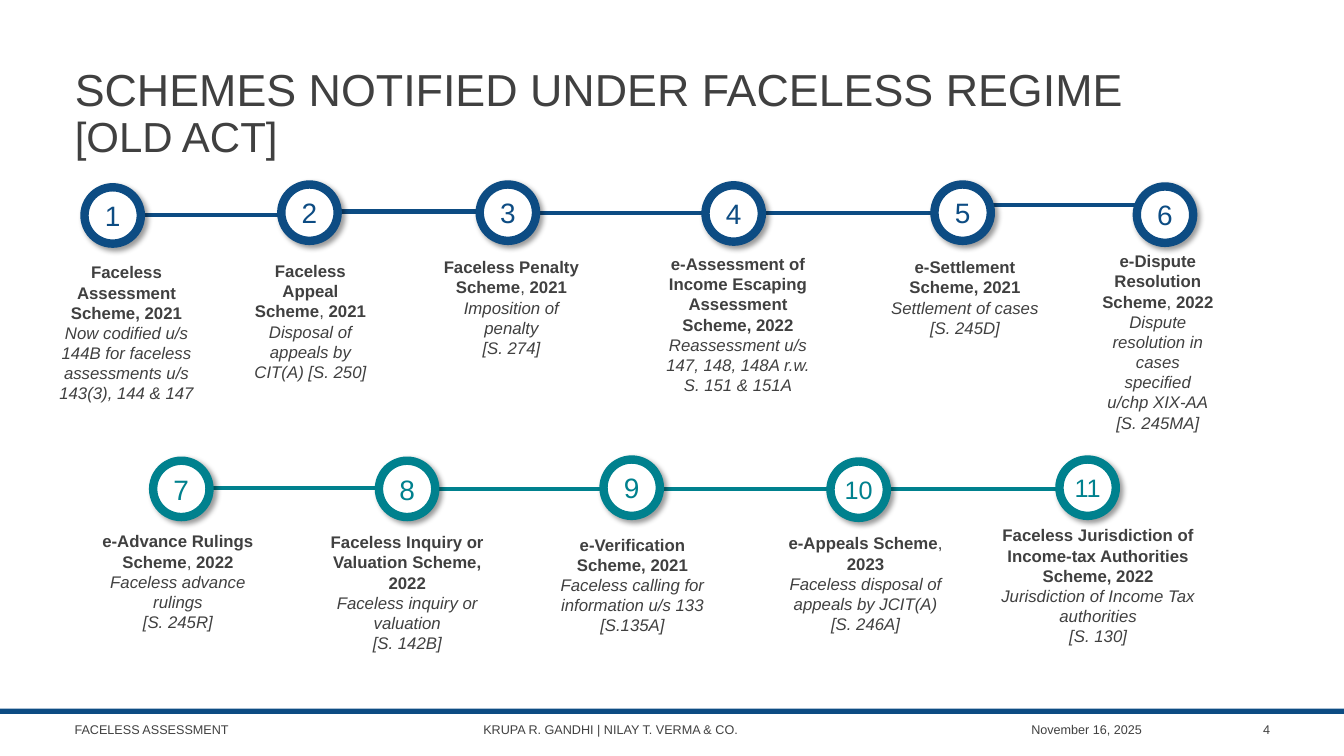
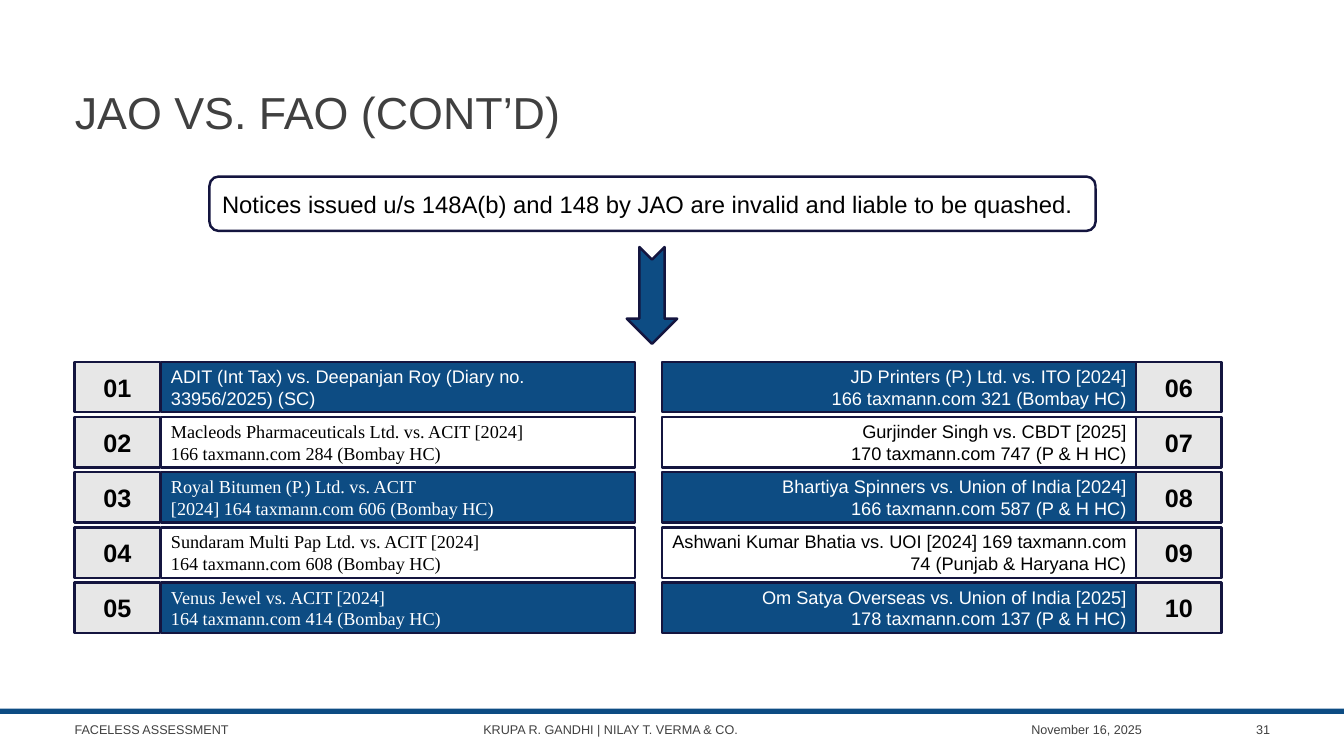
from dataclasses import dataclass
from itertools import pairwise

from lxml import etree
from pptx import Presentation
from pptx import util as u
from pptx.dml import color
from pptx.enum import shapes, text
from pptx.oxml import ns


@dataclass(frozen=True)
class Theme:
    font: str = "Arial"
    serif: str = "Times New Roman"
    blue: str = "0D4C83"
    teal: str = "00818E"
    navy: str = "14153F"
    ink: str = "404040"
    black: str = "000000"
    white: str = "FFFFFF"
    grey: str = "E7E7E7"
    title: int = 32
    title_suffix: int = 30
    number: int = 20
    small_number: int = 18
    notice: int = 17
    case: int = 13
    body: int = 12
    footer: int = 9


THEME = Theme()
LEFT, CENTER, RIGHT = text.PP_ALIGN.LEFT, text.PP_ALIGN.CENTER, text.PP_ALIGN.RIGHT
SLIDE_WIDTH, SLIDE_HEIGHT = 33.87, 19.05
CIRCLE = 1.42


def rgb(value):
    return color.RGBColor.from_string(value)


def assign(target, values):
    for name, value in values.items():
        setattr(target, name, value)


class Deck:
    """Hold the presentation, its style and the current slide."""

    def __init__(self, theme):
        self.theme = theme
        self.presentation = Presentation()
        assign(self.presentation, {"slide_width": u.Cm(SLIDE_WIDTH),
                                   "slide_height": u.Cm(SLIDE_HEIGHT)})
        self.slide = None

    def add_slide(self, title_runs, number, title_width):
        layout = self.presentation.slide_layouts[5]
        self.slide = self.presentation.slides.add_slide(layout)
        title = self.slide.shapes.title
        box = (1.63, 1.52, title_width, 2.74)
        assign(title, dict(zip(("left", "top", "width", "height"), map(u.Cm, box))))
        self.fill_text(title, [title_runs], size=self.theme.title, spacing=0.9)
        self.footer(number)

    def footer(self, number):
        self.shape("RECTANGLE", (0, 17.86, SLIDE_WIDTH, 0.13), self.theme.blue)
        for label, left, width, align in (
            ("FACELESS ASSESSMENT", 1.63, 8, LEFT),
            ("KRUPA R. GANDHI | NILAY T. VERMA & CO.", 11.93, 8.9, LEFT),
            ("November 16, 2025", 21.13, 7.9, RIGHT),
            (number, 29.34, 2.92, RIGHT),
        ):
            self.text_box((left, 17.86, width, 1.02), [[(label, {})]],
                          size=self.theme.footer, align=align)

    def fill_text(self, shape, lines, size, ink=None, font=None, align=LEFT,
                  anchor="MIDDLE", spacing=None, **frame_values):
        frame = shape.text_frame
        assign(frame, {"word_wrap": True, "auto_size": text.MSO_AUTO_SIZE.NONE,
                       "vertical_anchor": text.MSO_ANCHOR[anchor], **frame_values})
        for index, runs in enumerate(lines):
            paragraph = frame.add_paragraph() if index else frame.paragraphs[0]
            assign(paragraph, {"alignment": align, "line_spacing": spacing})
            for content, style in runs:
                run = paragraph.add_run()
                run.text = content
                assign(run.font, {"name": font or self.theme.font,
                                  "size": u.Pt(size), **style})
                run.font.color.rgb = rgb(ink or self.theme.ink)

    def text_box(self, box, lines, **style):
        self.fill_text(self.slide.shapes.add_textbox(*map(u.Cm, box)), lines, **style)

    def shape(self, kind, box, fill, line=None, weight=1.75):
        shape = self.slide.shapes.add_shape(shapes.MSO_SHAPE[kind], *map(u.Cm, box))
        shape.shadow.inherit = False
        shape.fill.solid()
        shape.fill.fore_color.rgb = rgb(fill)
        if line:
            shape.line.color.rgb = rgb(line)
            shape.line.width = u.Pt(weight)
        else:
            shape.line.fill.background()
        return shape

    def circle(self, left, top, label, tint):
        shape = self.shape("OVAL", (left, top, CIRCLE, CIRCLE), self.theme.white, tint, 6)
        effects = shape.element.spPr.find(ns.qn("a:effectLst"))
        shadow = etree.SubElement(effects, ns.qn("a:outerShdw"), blurRad="50800",
                                  dist="38100", dir="2700000", algn="tl", rotWithShape="0")
        black = etree.SubElement(shadow, ns.qn("a:srgbClr"), val=self.theme.black)
        etree.SubElement(black, ns.qn("a:alpha"), val="40000")
        size = self.theme.number if len(label) == 1 else self.theme.small_number
        self.fill_text(shape, [[(label, {})]], size=size, ink=tint, align=CENTER,
                       word_wrap=False, margin_left=0, margin_right=0)

    def link(self, start, end, height, tint):
        connector = self.slide.shapes.add_connector(
            shapes.MSO_CONNECTOR.STRAIGHT, *map(u.Cm, (start, height, end, height)))
        connector.line.color.rgb = rgb(tint)
        connector.line.width = u.Pt(3)
        etree.SubElement(connector.element.spPr, ns.qn("a:effectLst"))

    def timeline(self, stops, first, tint):
        for stop, following in pairwise(stops):
            self.link(stop["left"] + CIRCLE, following["left"], stop["link"], tint)
        for number, stop in enumerate(stops, first):
            self.circle(stop["left"], stop["top"], str(number), tint)
            heading = [(part, {"bold": index % 2 == 0})
                       for index, part in enumerate(stop["heading"])]
            details = [[(line, {"italic": True})] for line in stop["details"]]
            self.text_box(stop["box"], [heading, *details], size=self.theme.body,
                          align=CENTER, anchor="TOP")

    def case(self, row, number, lines, font, mirrored):
        top = 9.12 + 1.39 * row
        number_left, case_left = (28.63, 16.69) if mirrored else (1.88, 4.06)
        fill, ink = ((self.theme.white, self.theme.black) if row % 2
                     else (self.theme.blue, self.theme.white))
        badge = self.shape("RECTANGLE", (number_left, top, 2.16, 1.27),
                           self.theme.grey, self.theme.navy)
        self.fill_text(badge, [[(f"{number:02}", {"bold": True})]],
                       size=self.theme.small_number, ink=self.theme.black, align=CENTER)
        panel = self.shape("RECTANGLE", (case_left, top, 11.94, 1.27), fill, self.theme.navy)
        self.fill_text(panel, [[(line, {})] for line in lines], size=self.theme.case,
                       ink=ink, font=font, align=RIGHT if mirrored else LEFT)


def stop(left, top, link, box, heading, *details):
    return {"left": left, "top": top, "link": link, "box": box,
            "heading": heading, "details": details}


OLD_SCHEMES = [
    stop(2.13, 4.72, 5.41, (1.07, 6.48, 4.24, 4.45),
         ["Faceless Assessment Scheme, 2021"],
         "Now codified u/s 144B for faceless assessments u/s", "143(3), 144 & 147"),
    stop(7.09, 4.65, 5.33, (6.1, 6.45, 3.45, 3.84),
         ["Faceless Appeal Scheme", ", ", "2021"],
         "Disposal of appeals by CIT(A) [S. 250]"),
    stop(12.09, 4.65, 5.36, (10.77, 6.35, 4.24, 3.33),
         ["Faceless Penalty Scheme", ", ", "2021"],
         "Imposition of penalty", "[S. 274]"),
    stop(17.78, 4.67, 5.36, (16.48, 6.27, 4.24, 3.84),
         ["e-Assessment of Income Escaping Assessment Scheme, 2022"],
         "Reassessment u/s 147, 148, 148A r.w. S. 151 & 151A"),
    stop(23.55, 4.65, 5.17, (22.2, 6.35, 4.24, 2.31),
         ["e-Settlement Scheme, 2021"],
         "Settlement of cases", "[S. 245D]"),
    stop(28.65, 4.7, None, (27.53, 6.2, 3.3, 5.38),
         ["e-Dispute Resolution Scheme", ", ", "2022"],
         "Dispute resolution in cases specified u/chp XIX-AA", "[S. 245MA]"),
]

LATER_SCHEMES = [
    stop(3.86, 11.61, 12.29, (2.11, 13.26, 4.75, 2.82),
         ["e-Advance Rulings Scheme", ", ", "2022"],
         "Faceless advance rulings", "[S. 245R]"),
    stop(9.55, 11.61, 12.32, (7.7, 13.28, 5.13, 3.33),
         ["Faceless Inquiry or Valuation Scheme, 2022"],
         "Faceless inquiry or valuation", "[S. 142B]"),
    stop(15.21, 11.58, 12.32, (13.82, 13.34, 4.24, 2.82),
         ["e-Verification Scheme, 2021"],
         "Faceless calling for information u/s 133 [S.135A]"),
    stop(20.93, 11.63, 12.32, (19.25, 13.31, 5.13, 2.82),
         ["e-Appeals Scheme", ", ", "2023"],
         "Faceless disposal of appeals by JCIT(A)", "[S. 246A]"),
    stop(26.7, 11.58, None, (24.54, 13.11, 6.27, 3.33),
         ["Faceless Jurisdiction of Income-tax Authorities Scheme, 2022"],
         "Jurisdiction of Income Tax authorities", "[S. 130]"),
]

CASES = [
    ["ADIT (Int Tax) vs. Deepanjan Roy (Diary no. 33956/2025) (SC)"],
    ["Macleods Pharmaceuticals Ltd. vs. ACIT [2024]", "166 taxmann.com 284 (Bombay HC)"],
    ["Royal Bitumen (P.) Ltd. vs. ACIT", "[2024] 164 taxmann.com 606 (Bombay HC)"],
    ["Sundaram Multi Pap Ltd. vs. ACIT [2024]", "164 taxmann.com 608 (Bombay HC)"],
    ["Venus Jewel vs. ACIT [2024]", "164 taxmann.com 414 (Bombay HC)"],
    ["JD Printers (P.) Ltd. vs. ITO [2024]", "166 taxmann.com 321 (Bombay HC)"],
    ["Gurjinder Singh vs. CBDT [2025]", "170 taxmann.com 747 (P & H HC)"],
    ["Bhartiya Spinners vs. Union of India [2024]", "166 taxmann.com 587 (P & H HC)"],
    ["Ashwani Kumar Bhatia vs. UOI [2024] 169 taxmann.com 74 (Punjab & Haryana HC)"],
    ["Om Satya Overseas vs. Union of India [2025]", "178 taxmann.com 137 (P & H HC)"],
]


def build_schemes(deck):
    deck.add_slide([("SCHEMES NOTIFIED UNDER FACELESS REGIME ", {}),
                    ("[OLD ACT]", {"size": u.Pt(THEME.title_suffix)})], "4", 29.24)
    deck.timeline(OLD_SCHEMES, 1, THEME.blue)
    deck.timeline(LATER_SCHEMES, len(OLD_SCHEMES) + 1, THEME.teal)


def build_cases(deck):
    deck.add_slide([("JAO VS. FAO (CONT’D)", {})], "31", 30.63)
    notice = deck.shape("ROUNDED_RECTANGLE", (5.28, 4.45, 22.33, 1.37),
                        THEME.white, THEME.navy)
    deck.fill_text(notice, [[("Notices issued u/s 148A(b) and 148 by JAO are invalid "
                              "and liable to be quashed.", {})]],
                   size=THEME.notice, ink=THEME.black)
    arrow = deck.shape("NOTCHED_RIGHT_ARROW", (15.21, 6.81, 2.44, 1.27),
                       THEME.blue, THEME.navy)
    arrow.rotation = 90
    for index, lines in enumerate(CASES):
        font = THEME.serif if 1 <= index <= 4 else THEME.font
        deck.case(index % 5, index + 1, lines, font, mirrored=index >= 5)


def main():
    deck = Deck(THEME)
    build_schemes(deck)
    build_cases(deck)
    deck.presentation.save("out.pptx")


if __name__ == "__main__":
    main()
